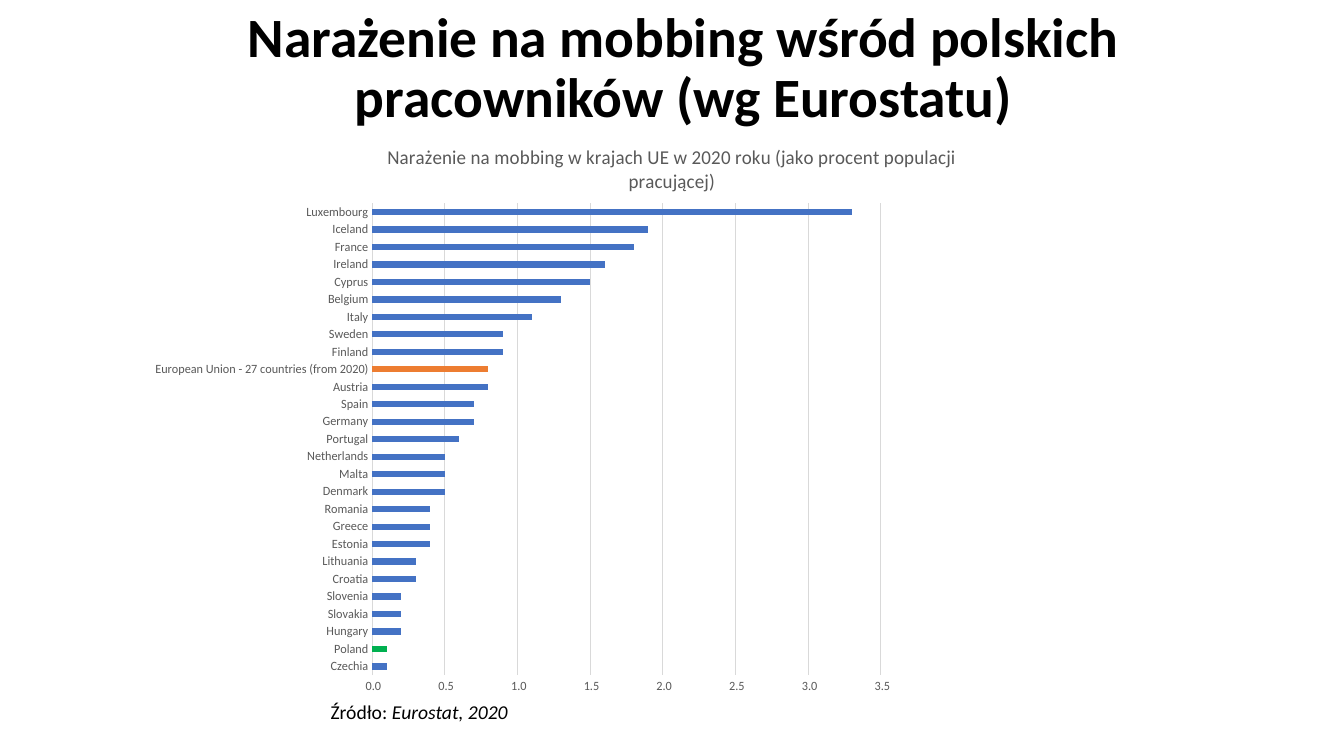
from lxml import etree
from pptx import Presentation
from pptx.chart.data import CategoryChartData
from pptx.dml.color import RGBColor
from pptx.enum.chart import XL_CHART_TYPE, XL_TICK_MARK
from pptx.enum.text import MSO_ANCHOR, PP_ALIGN
from pptx.oxml.ns import qn
from pptx.util import Inches, Pt

BAR_CLUSTERED = XL_CHART_TYPE.BAR_CLUSTERED
NO_TICK = XL_TICK_MARK.NONE
CENTER = PP_ALIGN.CENTER
MIDDLE = MSO_ANCHOR.MIDDLE

FONT = "Calibri"
BLACK, GREY, GRID = "000000", "595959", "D9D9D9"
BLUE, GREEN, ORANGE = "4472C4", "00B050", "ED7D31"
EU = "European Union - 27 countries (from 2020)"
HIGHLIGHTS = {"Poland": GREEN, EU: ORANGE}
EXPOSURE = {
    "Czechia": 0.1, "Poland": 0.1, "Hungary": 0.2, "Slovakia": 0.2,
    "Slovenia": 0.2, "Croatia": 0.3, "Lithuania": 0.3, "Estonia": 0.4,
    "Greece": 0.4, "Romania": 0.4, "Denmark": 0.5, "Malta": 0.5,
    "Netherlands": 0.5, "Portugal": 0.6, "Germany": 0.7, "Spain": 0.7,
    "Austria": 0.8, EU: 0.8, "Finland": 0.9, "Sweden": 0.9, "Italy": 1.1,
    "Belgium": 1.3, "Cyprus": 1.5, "Ireland": 1.6, "France": 1.8,
    "Iceland": 1.9, "Luxembourg": 3.3,
}


def color(hex_value):
    return RGBColor.from_string(hex_value)


def style_font(font, size, hex_value, bold=False, italic=False):
    font.name = FONT
    font.size = Pt(size)
    font.bold = bold
    font.italic = italic
    font.color.rgb = color(hex_value)


def add_run(paragraph, text, size, hex_value, bold=False, italic=False):
    run = paragraph.add_run()
    run.text = text
    style_font(run.font, size, hex_value, bold, italic)


def fill_solid(fill, hex_value):
    fill.solid()
    fill.fore_color.rgb = color(hex_value)


def style_line(line, hex_value):
    line.color.rgb = color(hex_value)
    line.width = Pt(0.75)


def set_layout(parent, index, **settings):
    for old in parent.findall(qn("c:layout")):
        parent.remove(old)
    layout = etree.Element(qn("c:layout"))
    manual = etree.SubElement(layout, qn("c:manualLayout"))
    for tag, value in settings.items():
        etree.SubElement(manual, qn(f"c:{tag}")).set("val", str(value))
    parent.insert(index, layout)


def add_heading(slide):
    heading = slide.shapes.title
    heading.left, heading.top = Inches(1.03), Inches(0.14)
    heading.width, heading.height = Inches(11.5), Inches(1.1)
    frame = heading.text_frame
    frame.word_wrap = True
    frame.vertical_anchor = MIDDLE
    paragraph = frame.paragraphs[0]
    paragraph.alignment = CENTER
    paragraph.line_spacing = 0.9
    add_run(paragraph, "Narażenie na mobbing wśród polskich pracowników (wg Eurostatu)",
            39.6, BLACK, bold=True)


def style_axes(chart):
    countries, percent = chart.category_axis, chart.value_axis
    for axis in (countries, percent):
        axis.major_tick_mark = axis.minor_tick_mark = NO_TICK
        style_font(axis.tick_labels.font, 9, GREY)
    style_line(countries.format.line, GRID)
    percent.format.line.fill.background()
    percent.has_major_gridlines = True
    style_line(percent.major_gridlines.format.line, GRID)
    percent.minimum_scale, percent.maximum_scale = 0, 3.5
    percent.major_unit = 0.5
    percent.tick_labels.number_format = "#\\ ##0.0"
    percent.tick_labels.number_format_is_linked = False


def add_exposure_chart(slide):
    data = CategoryChartData()
    data.categories = list(EXPOSURE)
    data.add_series("Series 1", list(EXPOSURE.values()))
    chart = slide.shapes.add_chart(
        BAR_CLUSTERED, Inches(1.47), Inches(1.15), Inches(8.05), Inches(5.86), data).chart
    style_font(chart.font, 10, BLACK)
    chart.has_legend = False
    chart.has_title = True
    caption = chart.chart_title
    caption.include_in_layout = False
    add_run(caption.text_frame.paragraphs[0],
            "Narażenie na mobbing w krajach UE w 2020 roku (jako procent populacji pracującej)",
            14, GREY)
    set_layout(caption._element, 1, xMode="edge", yMode="edge", x=0.3, y=0.04)
    plot_area = chart._chartSpace.find(".//" + qn("c:plotArea"))
    set_layout(plot_area, 0, layoutTarget="inner", xMode="edge", yMode="edge",
               x=0.285, y=0.148, w=0.648, h=0.799)
    style_axes(chart)
    bars = chart.plots[0]
    bars.gap_width = 182
    bars.vary_by_categories = False
    exposure = bars.series[0]
    exposure.invert_if_negative = False
    fill_solid(exposure.format.fill, BLUE)
    for index, country in enumerate(EXPOSURE):
        if country in HIGHLIGHTS:
            fill_solid(exposure.points[index].format.fill, HIGHLIGHTS[country])


def add_source_note(slide):
    note = slide.shapes.add_textbox(Inches(3.18), Inches(6.89), Inches(3.6), Inches(0.34))
    note.text_frame.word_wrap = True
    paragraph = note.text_frame.paragraphs[0]
    add_run(paragraph, "Źródło: ", 14, BLACK)
    add_run(paragraph, "Eurostat, 2020", 14, BLACK, italic=True)


def main():
    presentation = Presentation()
    presentation.slide_width = Inches(13.33)
    presentation.slide_height = Inches(7.5)
    slide = presentation.slides.add_slide(presentation.slide_layouts[5])
    add_heading(slide)
    add_exposure_chart(slide)
    add_source_note(slide)
    presentation.save("out.pptx")


if __name__ == "__main__":
    main()
